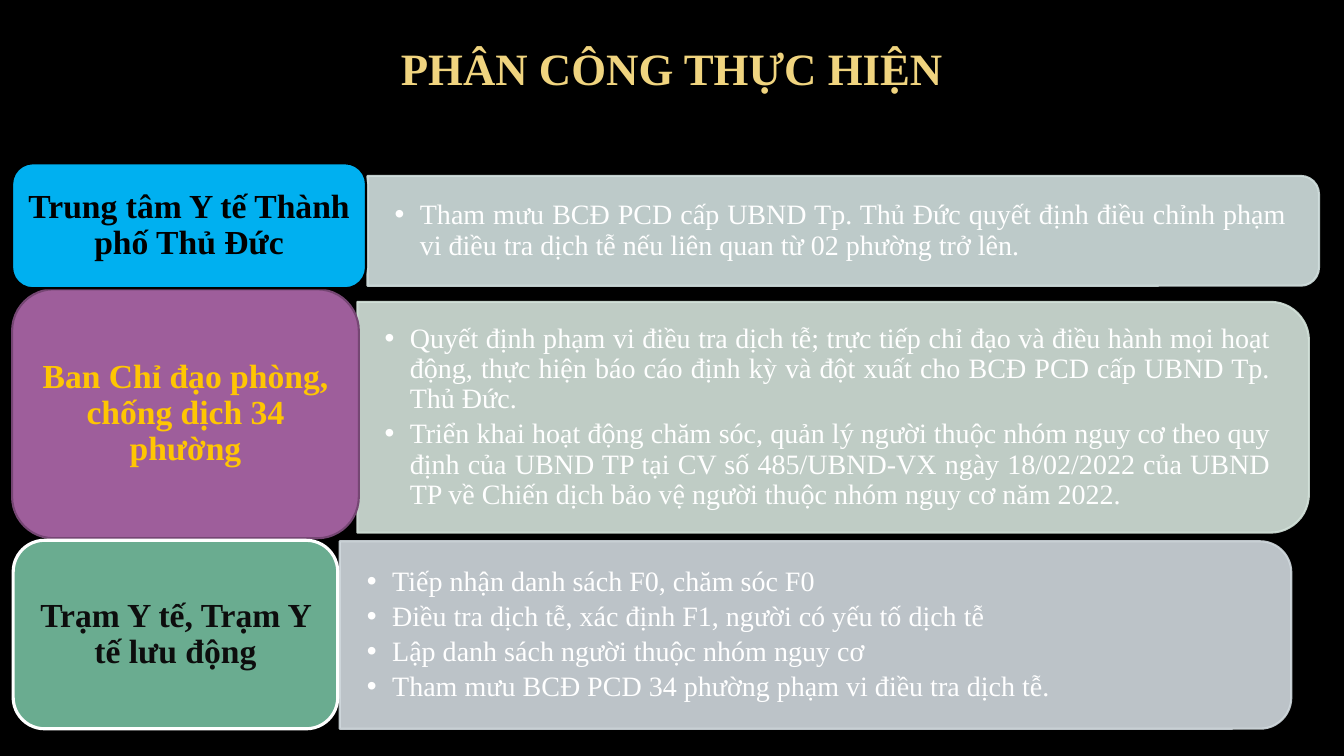
from dataclasses import dataclass

from lxml import etree
from pptx import Presentation, util as u
from pptx.dml.color import RGBColor
from pptx.enum import shapes, text
from pptx.oxml import ns

WIDE, HIGH = u.Inches(13.333), u.Inches(7.5)
FONT = "Times New Roman"
COLORS = {
    "back": "000000", "title": "F0D47F", "list": "FFFFFF",
    "blue": "00B0F0", "black": "000000", "mist": "D2E0DF",
    "plum": "9E5E9B", "wine": "754673", "gold": "FFC602", "sage": "D4E3DB",
    "green": "6AAC90", "white": "FFFFFF", "ink": "0D0D0D", "slate": "D1D9DE",
}
CORNER = 0.0488  # text inset of a rounded corner, as a share of panel height


@dataclass
class Box:
    """Left, top, width and height in percent of the slide."""
    left: float
    top: float
    width: float
    height: float

    def emu(self) -> tuple[int, int, int, int]:
        return (int(WIDE * self.left / 100), int(HIGH * self.top / 100),
                int(WIDE * self.width / 100), int(HIGH * self.height / 100))


@dataclass
class Unit:
    """One body in charge, with its tasks."""
    name: str
    label: Box
    fill: str
    edge: str
    ink: str
    weight: float
    panel: Box
    tint: str
    tasks: list[str]


UNITS = [
    Unit("Trung tâm Y tế Thành phố Thủ Đức", Box(0.9, 21.6, 26.33, 16.53),
         "blue", "black", "black", 1.5, Box(27.34, 23.27, 70.8, 14.53), "mist",
         ["Tham mưu BCĐ PCD cấp UBND Tp. Thủ Đức quyết định điều chỉnh phạm vi "
          "điều tra dịch tễ nếu liên quan từ 02 phường trở lên."]),
    Unit("Ban Chỉ đạo phòng, chống dịch 34 phường", Box(0.9, 38.27, 25.8, 32.93),
         "plum", "wine", "gold", 1.5, Box(26.59, 39.93, 70.8, 30.53), "sage",
         ["Quyết định phạm vi điều tra dịch tễ; trực tiếp chỉ đạo và điều hành "
          "mọi hoạt động, thực hiện báo cáo định kỳ và đột xuất cho BCĐ PCD cấp "
          "UBND Tp. Thủ Đức.",
          "Triển khai hoạt động chăm sóc, quản lý người thuộc nhóm nguy cơ theo "
          "quy định của UBND TP tại CV số 485/UBND-VX ngày 18/02/2022 của UBND "
          "TP về Chiến dịch bảo vệ người thuộc nhóm nguy cơ năm 2022."]),
    Unit("Trạm Y tế, Trạm Y tế lưu động", Box(0.98, 71.47, 24.15, 24.93),
         "green", "white", "ink", 2.25, Box(25.28, 71.6, 70.8, 24.8), "slate",
         ["Tiếp nhận danh sách F0, chăm sóc F0",
          "Điều tra dịch tễ, xác định F1, người có yếu tố dịch tễ",
          "Lập danh sách người thuộc nhóm nguy cơ",
          "Tham mưu BCĐ PCD 34 phường phạm vi điều tra dịch tễ."]),
]


def color(name: str) -> RGBColor:
    return RGBColor.from_string(COLORS[name])


def place(shape, spot: tuple[int, int, int, int]) -> None:
    shape.left, shape.top, shape.width, shape.height = spot


def write(shape, lines: list[str], *, size: float, ink: str, bold: bool = False,
          align=text.PP_ALIGN.CENTER, anchor=text.MSO_ANCHOR.MIDDLE,
          pitch: float = 0.9, after: float = 0, bullet: bool = False,
          inset: tuple[float, float] = (0.1, 0.05)) -> None:
    frame = shape.text_frame
    frame.text = "\n".join(lines)
    frame.word_wrap = True
    frame.auto_size = text.MSO_AUTO_SIZE.NONE
    frame.vertical_anchor = anchor
    frame.margin_left = frame.margin_right = u.Inches(inset[0])
    frame.margin_top = frame.margin_bottom = u.Inches(inset[1])
    for para in frame.paragraphs:
        if bullet:
            para.level = 1
            props = para._p.get_or_add_pPr()
            props.set("marL", str(u.Inches(0.25)))
            props.set("indent", str(u.Inches(-0.25)))
            etree.SubElement(props, ns.qn("a:buChar")).set("char", "•")
        para.alignment = align
        para.line_spacing = pitch
        para.space_before, para.space_after = u.Pt(0), u.Pt(after)
        for run in para.runs:
            font = run.font
            font.name, font.size, font.bold = FONT, u.Pt(size), bold
            font.color.rgb = color(ink)


def draw(slide, kind, spot: tuple[int, int, int, int], fill: str, edge: str,
         weight: float, alpha: int = 100):
    shape = slide.shapes.add_shape(kind, *spot)
    shape.shadow.inherit = False
    shape.fill.solid()
    shape.fill.fore_color.rgb = color(fill)
    shape.line.color.rgb = color(edge)
    shape.line.width = u.Pt(weight)
    if alpha < 100:
        for tone in shape._element.spPr.iter(ns.qn("a:srgbClr")):
            etree.SubElement(tone, ns.qn("a:alpha")).set("val", str(alpha * 1000))
    return shape


def add_unit(slide, unit: Unit, body) -> None:
    # Panel: rounded on its right side, so turned by a quarter
    left, top, width, height = unit.panel.emu()
    shift = (width - height) // 2
    panel = draw(slide, shapes.MSO_SHAPE.ROUND_2_SAME_RECTANGLE,
                 (left + shift, top - shift, height, width),
                 unit.tint, unit.tint, 1.5, alpha=90)
    panel.rotation = 90

    # Task list, raised above its panel
    trim = int(height * CORNER)
    place(body, (left, top + trim, width - trim, height - 2 * trim))
    write(body, unit.tasks, size=20, ink="list", align=text.PP_ALIGN.JUSTIFY,
          after=3.4, bullet=True, inset=(0.27, 0.14))
    panel._element.addnext(body._element)

    # Label
    label = draw(slide, shapes.MSO_SHAPE.ROUNDED_RECTANGLE, unit.label.emu(),
                 unit.fill, unit.edge, unit.weight)
    write(label, [unit.name], size=24, ink=unit.ink, bold=True)


def main() -> None:
    deck = Presentation()
    deck.slide_width, deck.slide_height = WIDE, HIGH
    slide = deck.slides.add_slide(deck.slide_layouts.get_by_name("Comparison"))
    slide.background.fill.solid()
    slide.background.fill.fore_color.rgb = color("back")

    # Title
    title, *bodies = list(slide.placeholders)
    place(title, Box(25.35, 4.67, 49.28, 8.53).emu())
    write(title, ["PHÂN CÔNG THỰC HIỆN"], size=32, ink="title", bold=True,
          anchor=text.MSO_ANCHOR.TOP, pitch=1.0)

    # Rows; the second unit lies lowest
    for rank in (1, 0, 2):
        add_unit(slide, UNITS[rank], bodies[rank])
    for spare in bodies[len(UNITS):]:
        spare._element.getparent().remove(spare._element)

    deck.save("out.pptx")


if __name__ == "__main__":
    main()
